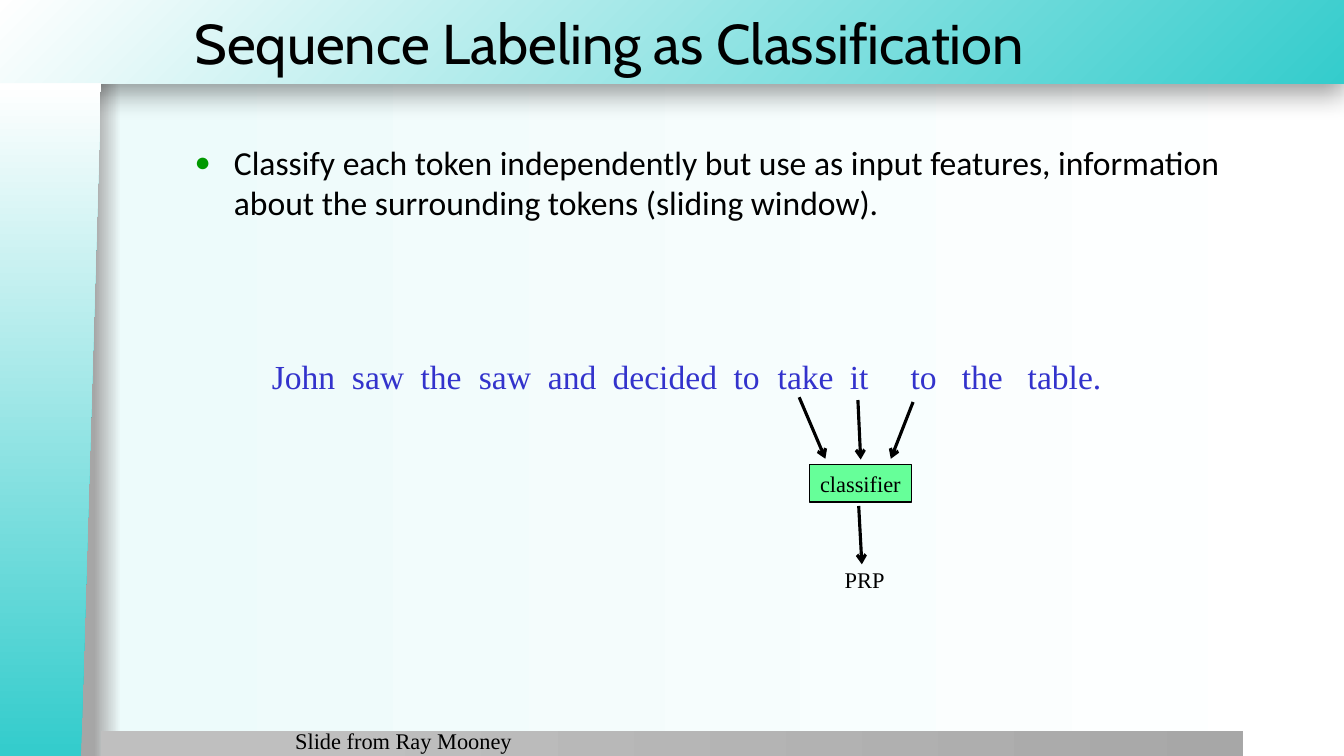
from dataclasses import dataclass

from lxml.etree import SubElement
from pptx import Presentation
from pptx.dml.color import RGBColor
from pptx.enum.shapes import MSO_CONNECTOR, MSO_SHAPE
from pptx.enum.text import MSO_ANCHOR, MSO_AUTO_SIZE, PP_ALIGN
from pptx.oxml import parse_xml
from pptx.oxml.ns import nsdecls, qn
from pptx.util import Cm, Pt

TEAL, WHITE, BLACK = "34CCCC", "FFFFFF", "000000"
SERIF = "Times New Roman"
LEFT_TO_RIGHT = '<a:lin ang="0" scaled="0"/>'
FROM_CORNER = '<a:path path="circle"><a:fillToRect l="100000" t="100000"/></a:path>'


@dataclass
class Frame:
    left: float
    top: float
    width: float
    height: float

    def lengths(self) -> tuple:
        return Cm(self.left), Cm(self.top), Cm(self.width), Cm(self.height)


@dataclass
class Panel:
    preset: MSO_SHAPE
    frame: Frame
    stops: list
    direction: str = LEFT_TO_RIGHT
    rotation: int = 0
    flipped: bool = False
    shaded: bool = False


@dataclass
class Label:
    text: str
    frame: Frame
    align: PP_ALIGN = PP_ALIGN.LEFT


@dataclass
class Arrow:
    start: tuple
    end: tuple


@dataclass
class Word:
    text: str
    offset: float


PANELS = [
    Panel(MSO_SHAPE.RECTANGLE, Frame(-0.02, 0, 33.89, 2.11),
          [(0, TEAL), (100, WHITE)], FROM_CORNER, shaded=True),
    Panel(MSO_SHAPE.RECTANGLE, Frame(2.54, 18.41, 28.78, 0.66),
          [(20, "BFBFBF"), (100, "A7A7A7")]),
    Panel(MSO_SHAPE.FLOWCHART_MANUAL_INPUT, Frame(-7.21, 9.32, 16.97, 2.54),
          [(1, TEAL), (100, WHITE)], rotation=270, flipped=True),
]
SENTENCE = [
    Word("John", 0), Word("saw", 2.02), Word("the", 3.75), Word("saw", 5.22),
    Word("and", 6.96), Word("decided", 8.59), Word("to", 11.64), Word("take", 12.75),
    Word("it", 14.57), Word("to", 16.1), Word("the", 17.39), Word("table.", 19.05),
]
ARROWS = [
    Arrow((20.14, 10.01), (20.8, 11.56)),
    Arrow((23.01, 10.13), (22.45, 11.56)),
    Arrow((21.62, 10.08), (21.69, 11.58)),
    Arrow((21.64, 12.75), (21.72, 14.22)),
]
LABELS = [
    Label("PRP", Frame(21.03, 14.15, 1.52, 0.94), PP_ALIGN.CENTER),
    Label("Slide from Ray Mooney", Frame(7.19, 18.21, 8.69, 0.64)),
]


def color(value: str) -> RGBColor:
    return RGBColor.from_string(value)


def set_gradient(owner, stops: list, direction: str) -> None:
    """Replace the solid fill inside owner with a gradient."""
    marks = "".join(
        f'<a:gs pos="{percent * 1000}"><a:srgbClr val="{value}"/></a:gs>'
        for percent, value in stops
    )
    gradient = parse_xml(
        f'<a:gradFill {nsdecls("a")} rotWithShape="1"><a:gsLst>{marks}</a:gsLst>'
        f"{direction}</a:gradFill>"
    )
    owner.replace(owner.find(qn("a:solidFill")), gradient)


def add_panel(page, panel: Panel) -> None:
    shape = page.shapes.add_shape(panel.preset, *panel.frame.lengths())
    shape.shadow.inherit = False
    shape.rotation = panel.rotation
    shape.line.fill.background()
    shape.fill.solid()
    properties = shape.element.spPr
    set_gradient(properties, panel.stops, panel.direction)
    if panel.flipped:
        properties.find(qn("a:xfrm")).set("flipV", "1")
    if panel.shaded:
        properties.find(qn("a:effectLst")).append(parse_xml(
            f'<a:outerShdw {nsdecls("a")} blurRad="{Pt(20)}" dist="{Pt(6)}" dir="5400000" '
            f'algn="t" rotWithShape="0"><a:srgbClr val="{BLACK}"><a:alpha val="40000"/>'
            "</a:srgbClr></a:outerShdw>"
        ))


def write(shape, text: str, size: float, font: str, value: str = BLACK,
          align: PP_ALIGN = PP_ALIGN.LEFT, anchor: MSO_ANCHOR = MSO_ANCHOR.TOP):
    """Fill the shape with one formatted paragraph and return it."""
    frame = shape.text_frame
    frame.auto_size = MSO_AUTO_SIZE.NONE
    frame.word_wrap = True
    frame.vertical_anchor = anchor
    frame.text = text
    para = frame.paragraphs[0]
    para.alignment = align
    para.font.size = Pt(size)
    para.font.name = font
    para.font.color.rgb = color(value)
    return para


def place(shape, frame: Frame) -> None:
    shape.left, shape.top, shape.width, shape.height = frame.lengths()


def add_bullet(para) -> None:
    para.space_before = Pt(4.8)
    properties = para._p.get_or_add_pPr()
    properties.set("marL", str(Cm(0.99)))
    properties.set("indent", str(Cm(-0.99)))
    defaults = properties.find(qn("a:defRPr"))
    for xml in ('<a:buClr {}><a:srgbClr val="009900"/></a:buClr>',
                '<a:buSzPct {} val="80000"/>', '<a:buChar {} char="●"/>'):
        defaults.addprevious(parse_xml(xml.format(nsdecls("a"))))


def add_sentence(page) -> None:
    box = page.shapes.add_textbox(*Frame(6.6, 8.84, 22.2, 1.3).lengths())
    para = write(box, "\t".join(word.text for word in SENTENCE), 24, SERIF, "3333CC")
    properties = para._p.get_or_add_pPr()
    tabs = parse_xml(f'<a:tabLst {nsdecls("a")}/>')
    for word in SENTENCE[1:]:
        SubElement(tabs, qn("a:tab"), pos=str(Cm(word.offset)), algn="l")
    properties.find(qn("a:defRPr")).addprevious(tabs)


def add_label(page, label: Label) -> None:
    box = page.shapes.add_textbox(*label.frame.lengths())
    write(box, label.text, 16, SERIF, align=label.align)
    box.text_frame.word_wrap = False


def add_arrow(page, arrow: Arrow) -> None:
    ends = [Cm(value) for value in arrow.start + arrow.end]
    line = page.shapes.add_connector(MSO_CONNECTOR.STRAIGHT, *ends)
    line.line.color.rgb = color(BLACK)
    line.line.width = Pt(2.25)
    properties = line.element.spPr
    SubElement(properties.find(qn("a:ln")), qn("a:tailEnd"), type="arrow")
    SubElement(properties, qn("a:effectLst"))


def add_classifier(page) -> None:
    box = page.shapes.add_shape(MSO_SHAPE.RECTANGLE, *Frame(20.4, 11.71, 2.57, 0.94).lengths())
    box.shadow.inherit = False
    box.fill.solid()
    box.fill.fore_color.rgb = color("66FF99")
    box.line.color.rgb = color(BLACK)
    box.line.width = Pt(1)
    write(box, "classifier", 16, SERIF, align=PP_ALIGN.CENTER, anchor=MSO_ANCHOR.MIDDLE)
    box.text_frame.word_wrap = False


def main() -> None:
    deck = Presentation()
    deck.slide_width, deck.slide_height = Cm(33.87), Cm(19.05)
    page = deck.slides.add_slide(deck.slide_layouts[1])
    page.background.fill.solid()
    set_gradient(page.element.find(".//" + qn("p:bgPr")),
                 [(7, "A6A6A6"), (9, "EDFBFB"), (100, WHITE)], LEFT_TO_RIGHT)
    for panel in PANELS:
        add_panel(page, panel)

    title, body = page.shapes.title, page.placeholders[1]
    for placeholder in (title, body):
        page.shapes.element.append(placeholder.element)
    place(title, Frame(4.65, 0, 29.22, 2.11))
    write(title, "Sequence Labeling as Classification", 40, "Cabin", anchor=MSO_ANCHOR.MIDDLE)
    place(body, Frame(4.65, 3.45, 26.67, 14.71))
    add_bullet(write(body, "Classify each token independently but use as input features, "
                     "information about the surrounding tokens (sliding window).", 24, "Calibri"))

    add_sentence(page)
    add_classifier(page)
    for arrow in ARROWS:
        add_arrow(page, arrow)
    for label in LABELS:
        add_label(page, label)
    deck.save("out.pptx")


if __name__ == "__main__":
    main()
